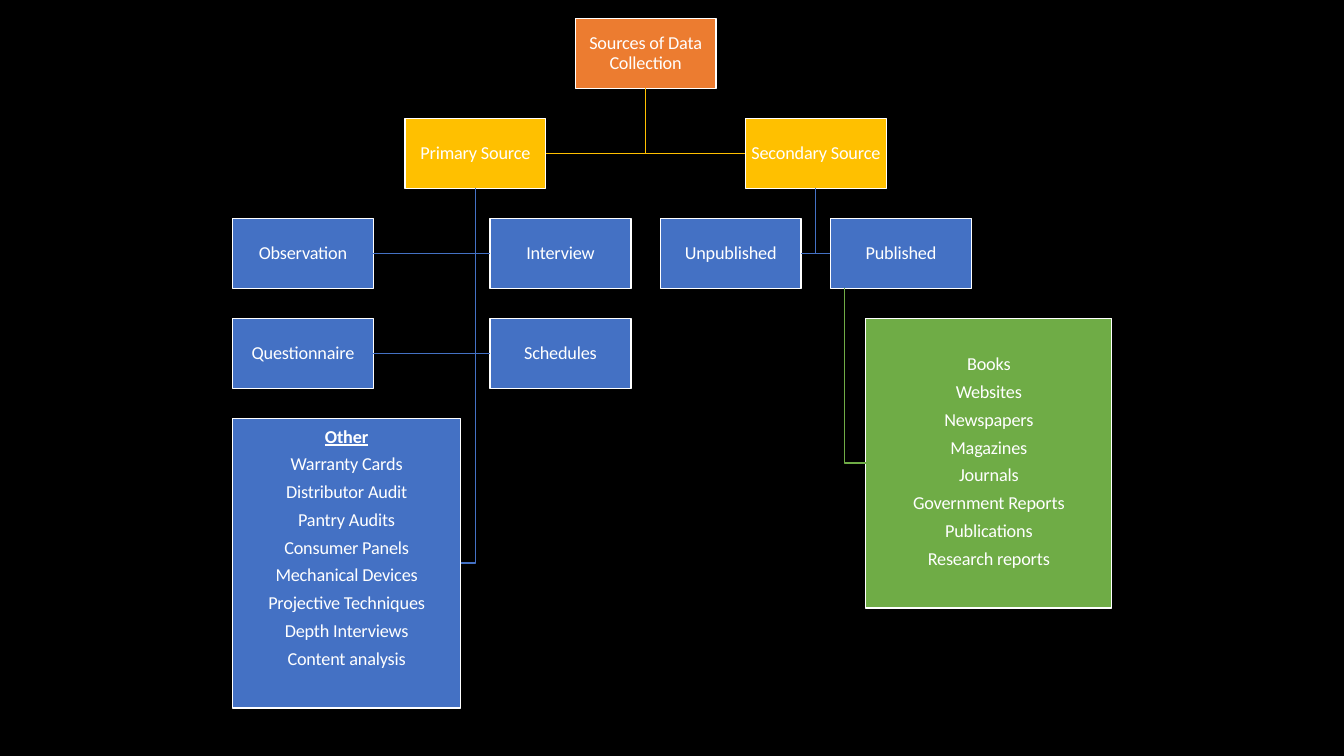
from lxml import etree
from pptx import Presentation
from pptx.dml.color import RGBColor
from pptx.enum.shapes import MSO_CONNECTOR, MSO_SHAPE
from pptx.enum.text import MSO_ANCHOR, MSO_AUTO_SIZE, PP_ALIGN
from pptx.oxml.ns import qn
from pptx.util import Cm, Pt

RECTANGLE = MSO_SHAPE.RECTANGLE
ELBOW = MSO_CONNECTOR.ELBOW
TOP, MIDDLE = MSO_ANCHOR.TOP, MSO_ANCHOR.MIDDLE
CENTER = PP_ALIGN.CENTER
NO_AUTOFIT = MSO_AUTO_SIZE.NONE
LEFT_SIDE, BOTTOM_SIDE, RIGHT_SIDE = 1, 2, 3

COLORS = {
    "black": "000000",
    "white": "FFFFFF",
    "orange": "EC7C30",
    "gold": "FFC000",
    "blue": "4471C4",
    "green": "6FAC46",
}
FONT = "Calibri"
FONT_SIZE = Pt(13)
LETTER_SPACING = "-10"  # hundredths of a point
LINE_WIDTH = Pt(0.96)

# Box grid, in centimetres
BOX_WIDTH, BOX_HEIGHT = 3.55, 1.77
ROWS = [0.46 + 2.52 * row for row in range(5)]
LEFT_COLUMN, MIDDLE_COLUMN, COLUMN_PITCH = 5.86, 12.35, 4.29
LIST_HEIGHT = 7.3

OTHER_METHODS = [
    "Other", "Warranty Cards", "Distributor Audit", "Pantry Audits",
    "Consumer Panels", "Mechanical Devices", "Projective Techniques",
    "Depth Interviews", "Content analysis",
]
PUBLISHED_SOURCES = [
    "Books", "Websites", "Newspapers", "Magazines", "Journals",
    "Government Reports", "Publications", "Research reports",
]


def rgb(color):
    return RGBColor.from_string(COLORS[color])


def format_box(shape, lines, color, spacing, anchor=MIDDLE, top_inset=0,
               bottom_inset=0):
    shape.fill.solid()
    shape.fill.fore_color.rgb = rgb(color)
    shape.line.color.rgb = rgb("white")
    shape.line.width = LINE_WIDTH
    frame = shape.text_frame
    frame.text = "\n".join(lines)
    frame.word_wrap = True
    frame.auto_size = NO_AUTOFIT
    frame.vertical_anchor = anchor
    frame.margin_left = frame.margin_right = 0
    frame.margin_top, frame.margin_bottom = Cm(top_inset), Cm(bottom_inset)
    for paragraph in frame.paragraphs:
        paragraph.alignment = CENTER
        paragraph.line_spacing = spacing
        paragraph.space_before = Pt(0)
        paragraph.font.name = FONT
        paragraph.font.size = FONT_SIZE
        paragraph.font.color.rgb = rgb("white")
        for run in paragraph.runs:
            run._r.get_or_add_rPr().set("spc", LETTER_SPACING)


def add_title_box(slide, text, left, top):
    title = slide.shapes.title
    title.left, title.top = Cm(left), Cm(top)
    title.width, title.height = Cm(BOX_WIDTH), Cm(BOX_HEIGHT)
    format_box(title, [text], "orange", Pt(14.3))
    return title


def add_rectangle(slide, left, top, width, height):
    shape = slide.shapes.add_shape(
        RECTANGLE, Cm(left), Cm(top), Cm(width), Cm(height))
    shape.shadow.inherit = False
    return shape


def add_box(slide, text, left, top, color="blue"):
    box = add_rectangle(slide, left, top, BOX_WIDTH, BOX_HEIGHT)
    format_box(box, [text], color, 1.0, bottom_inset=0.08)
    return box


def add_list_box(slide, items, left, top, width, color, top_inset):
    box = add_rectangle(slide, left, top, width, LIST_HEIGHT)
    format_box(box, items, color, 1.27, TOP, top_inset)
    return box


def connect_children(slide, parent, children, color, position=0.5):
    """Draw an L-shaped connector from each child's side to the parent.

    position is the place along the parent's bottom edge, 0 to 1.
    """
    trunk_x = parent.left + int(parent.width * position)
    parent_bottom = parent.top + parent.height
    for child in children:
        is_right = child.left > trunk_x
        side_x = child.left if is_right else child.left + child.width
        connector = slide.shapes.add_connector(
            ELBOW, side_x, child.top + child.height // 2,
            trunk_x, parent_bottom)
        connector.begin_connect(child, LEFT_SIDE if is_right else RIGHT_SIDE)
        if position == 0.5:
            connector.end_connect(parent, BOTTOM_SIDE)
        connector.line.color.rgb = rgb(color)
        connector.line.width = LINE_WIDTH
        properties = connector._element.spPr
        # The two-segment elbow has a single bend
        properties.find(qn("a:prstGeom")).set("prst", "bentConnector2")
        etree.SubElement(properties, qn("a:effectLst"))


def main():
    presentation = Presentation()
    presentation.slide_width, presentation.slide_height = Cm(33.87), Cm(19.05)
    slide = presentation.slides.add_slide(presentation.slide_layouts[5])
    slide.background.fill.solid()
    slide.background.fill.fore_color.rgb = rgb("black")

    unpublished_left = MIDDLE_COLUMN + COLUMN_PITCH
    published_left = unpublished_left + COLUMN_PITCH
    secondary_left = (unpublished_left + published_left) / 2
    primary_left = secondary_left - 2 * COLUMN_PITCH
    root_left = (primary_left + secondary_left) / 2

    root = add_title_box(slide, "Sources of Data\vCollection",
                         root_left, ROWS[0])
    primary = add_box(slide, "Primary Source", primary_left, ROWS[1], "gold")
    secondary = add_box(slide, "Secondary Source", secondary_left, ROWS[1],
                        "gold")
    methods = [
        add_box(slide, text, left, top)
        for text, left, top in [
            ("Observation", LEFT_COLUMN, ROWS[2]),
            ("Interview", MIDDLE_COLUMN, ROWS[2]),
            ("Questionnaire", LEFT_COLUMN, ROWS[3]),
            ("Schedules", MIDDLE_COLUMN, ROWS[3]),
        ]
    ]
    other = add_list_box(slide, OTHER_METHODS, LEFT_COLUMN, ROWS[4], 5.75,
                         "blue", 0.02)
    heading = other.text_frame.paragraphs[0].font
    heading.bold = heading.underline = True
    unpublished = add_box(slide, "Unpublished", unpublished_left, ROWS[2])
    published = add_box(slide, "Published", published_left, ROWS[2])
    sources = add_list_box(slide, PUBLISHED_SOURCES, 21.82, ROWS[3], 6.2,
                           "green", 0.72)

    connect_children(slide, root, [primary, secondary], "gold")
    connect_children(slide, primary, methods + [other], "blue")
    connect_children(slide, secondary, [unpublished, published], "blue")
    connect_children(slide, published, [sources], "green", position=0.1)

    presentation.save("out.pptx")


if __name__ == "__main__":
    main()
